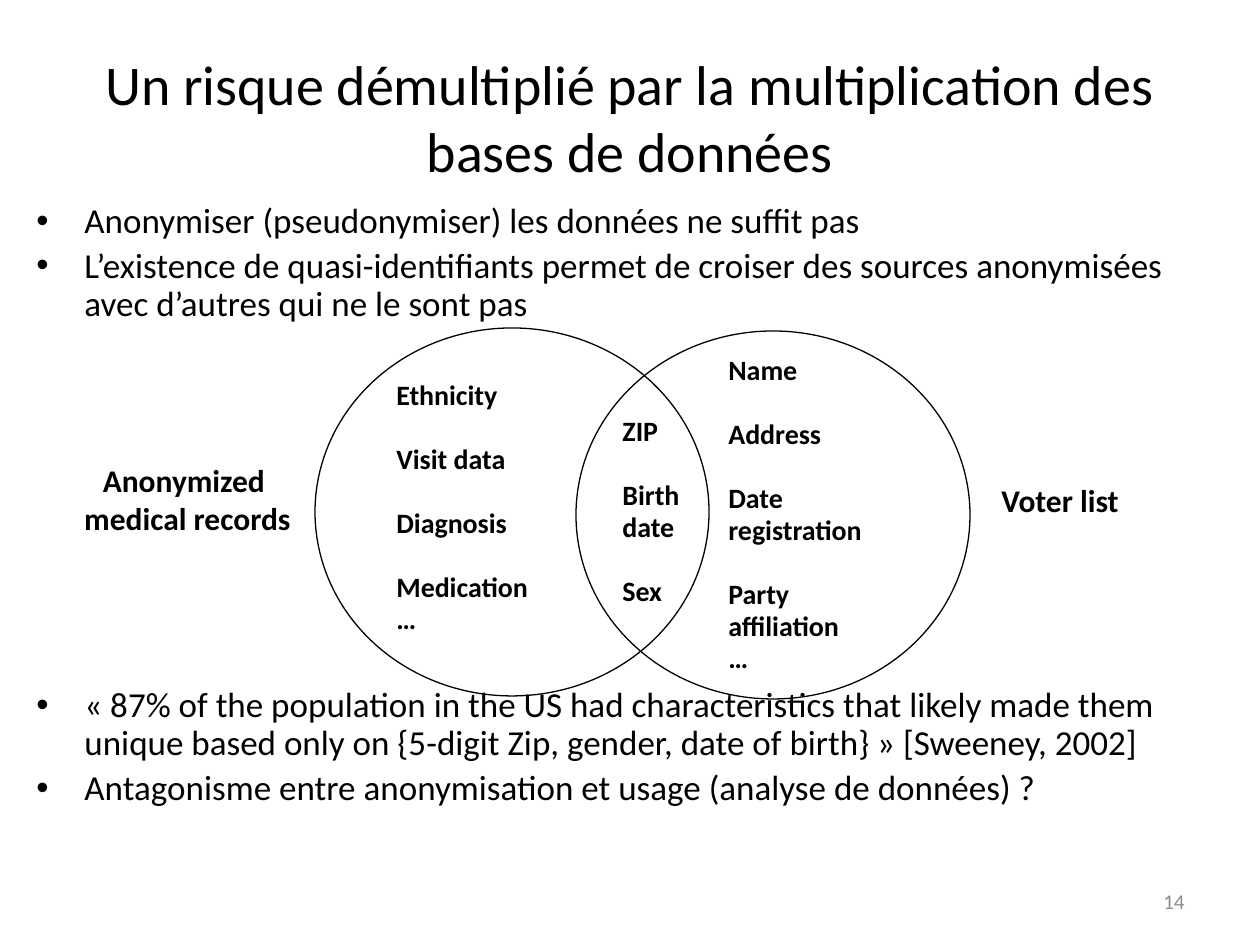
from lxml import etree
from pptx import Presentation
from pptx.dml.color import RGBColor
from pptx.enum.shapes import MSO_SHAPE
from pptx.enum.text import MSO_ANCHOR, PP_ALIGN
from pptx.oxml.ns import qn
from pptx.util import Emu, Pt

ELLIPSE = MSO_SHAPE.OVAL
MIDDLE, TOP = MSO_ANCHOR.MIDDLE, MSO_ANCHOR.TOP
LEFT, CENTER, RIGHT = PP_ALIGN.LEFT, PP_ALIGN.CENTER, PP_ALIGN.RIGHT
BLACK, GREY = "000000", "8C8C8C"
INDENT = 48


def px(n):
    return Emu(round(n * 914400 / 126))


def write(shape, lines, size, color=BLACK, bold=False, align=LEFT, anchor=TOP, wrap=True):
    frame = shape.text_frame
    frame.word_wrap = wrap
    frame.vertical_anchor = anchor
    frame.text = "\n".join(lines)
    for paragraph in frame.paragraphs:
        paragraph.alignment = align
        paragraph.font.name = "Calibri"
        paragraph.font.size = Pt(size)
        paragraph.font.bold = bold
        paragraph.font.color.rgb = RGBColor.from_string(color)
    return frame.paragraphs


prs = Presentation()
prs.slide_width, prs.slide_height = px(1260), px(945)
slide = prs.slides.add_slide(prs.slide_layouts[5])
shapes = slide.shapes

title = shapes.title
title.left, title.top, title.width, title.height = map(px, (63, 38, 1134, 158))
write(title, ["Un risque démultiplié par la multiplication des bases de données"],
      32, align=CENTER, anchor=MIDDLE)

page_number = shapes.add_textbox(*map(px, (903, 876, 294, 50)))
write(page_number, ["14"], 12, color=GREY, align=RIGHT, anchor=MIDDLE)

points = [
    ("Anonymiser (pseudonymiser) les données ne suffit pas", 4),
    ("L’existence de quasi-identifiants permet de croiser des sources anonymisées "
     "avec d’autres qui ne le sont pas", 4),
    ("« 87% of the population in the US had characteristics that likely made them "
     "unique based only on {5-digit Zip, gender, date of birth} » [Sweeney, 2002]", 208),
    ("Antagonisme entre anonymisation et usage (analyse de données) ?", 4),
]
body = shapes.add_textbox(*map(px, (24, 197, 1213, 738)))
paragraphs = write(body, [text for text, gap in points], 20)
for paragraph, (text, gap) in zip(paragraphs, points):
    paragraph.line_spacing = 0.9
    paragraph.space_before = Pt(gap)
    properties = paragraph._p.get_or_add_pPr()
    properties.set("marL", str(px(INDENT)))
    properties.set("indent", str(-px(INDENT)))
    bullet_font = etree.Element(qn("a:buFont"), typeface="Arial")
    bullet = etree.Element(qn("a:buChar"), char="•")
    properties.find(qn("a:spcBef")).addnext(bullet_font)
    bullet_font.addnext(bullet)

for left, top in [(315, 328), (576, 331)]:
    source_set = shapes.add_shape(ELLIPSE, *map(px, (left, top, 394, 368)))
    source_set.shadow.inherit = False
    source_set.fill.background()
    source_set.line.color.rgb = RGBColor.from_string(BLACK)
    source_set.line.width = Pt(0.75)

attributes = [
    ((610, 410, 105, 204), ["ZIP", "Birth\vdate", "Sex"]),
    ((716, 349, 200, 333), ["Name", "Address", "Date registration", "Party affiliation", "…"]),
    ((384, 374, 200, 268), ["Ethnicity", "Visit data", "Diagnosis", "Medication", "…"]),
]
for box, names in attributes:
    column = shapes.add_textbox(*map(px, box))
    for index, paragraph in enumerate(write(column, names, 16, bold=True)):
        paragraph.line_spacing = 0.95
        if index and names[index] != "…":
            paragraph.space_before = Pt(18.3)

captions = [
    ((989, 475, 150, 50), ["Voter list"], LEFT),
    ((68, 455, 239, 88), ["Anonymized ", "medical records"], CENTER),
]
for box, lines, align in captions:
    caption = shapes.add_textbox(*map(px, box))
    write(caption, lines, 18, bold=True, align=align, wrap=False)

prs.save("out.pptx")
